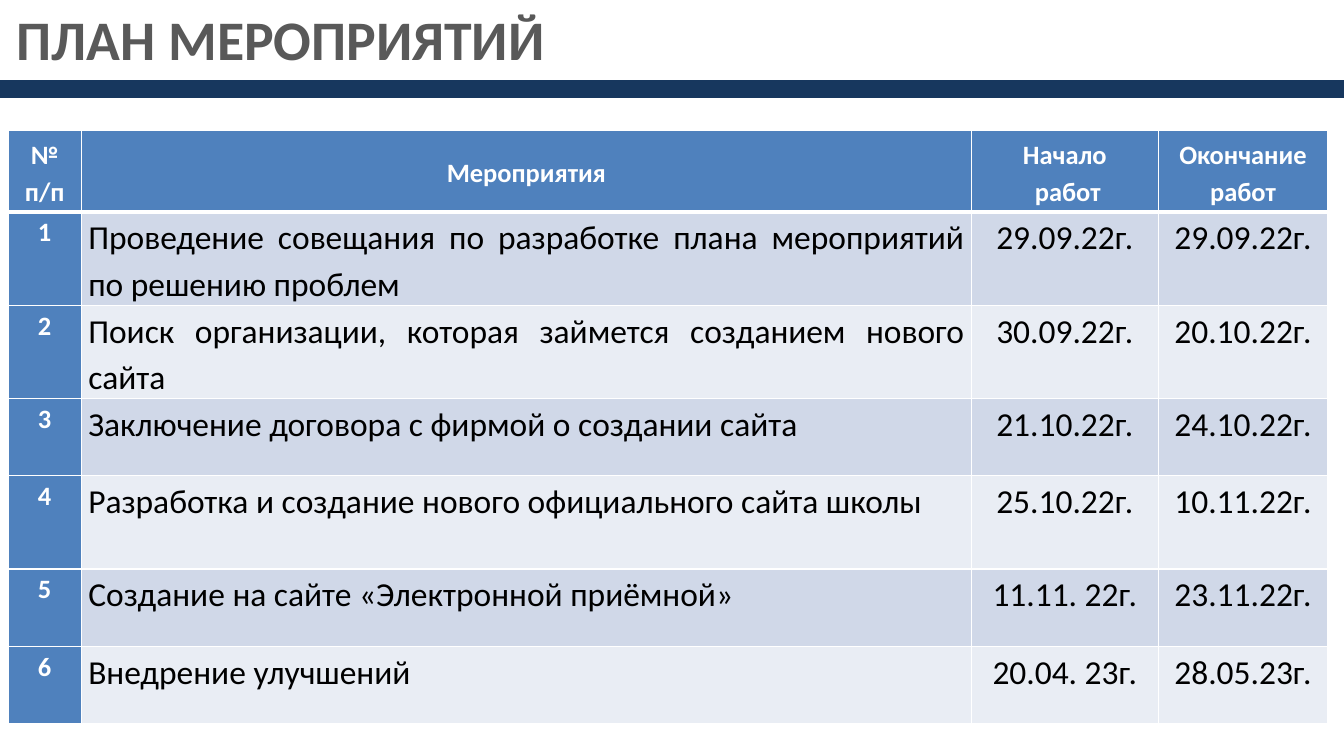
from dataclasses import dataclass
from lxml import etree
from pptx import Presentation
from pptx.dml.color import RGBColor
from pptx.enum.shapes import MSO_SHAPE
from pptx.enum.text import MSO_ANCHOR, MSO_AUTO_SIZE, PP_ALIGN
from pptx.oxml.ns import qn
from pptx.util import Inches, Pt

RECT = MSO_SHAPE.RECTANGLE
TOP, MIDDLE = MSO_ANCHOR.TOP, MSO_ANCHOR.MIDDLE
GROW = MSO_AUTO_SIZE.SHAPE_TO_FIT_TEXT
LEFT, CENTER, JUSTIFY = PP_ALIGN.LEFT, PP_ALIGN.CENTER, PP_ALIGN.JUSTIFY


@dataclass(frozen=True)
class Theme:
    font: str = "Calibri"
    title: str = "595959"
    bar: str = "17375E"
    head: str = "4F81BD"
    bands: tuple = ("D0D8E8", "E9EDF4")
    light: str = "FFFFFF"
    dark: str = "000000"
    big: int = 40
    body: int = 24
    small: int = 19


THEME = Theme()
WIDTH, HEIGHT = Inches(13.39), Inches(7.48)

# Table grid, in percent of the slide's width and height
COLS = (5.45, 66.24, 13.89, 12.62)
ROWS = (10.83, 12.43, 12.43, 10.29, 12.43, 10.29, 10.29)

HEADS = ("№ п/п", "Мероприятия", "Начало\n работ", "Окончание работ")
TASKS = (
    ("Проведение совещания по разработке плана мероприятий по решению проблем",
     "29.09.22г.", "29.09.22г."),
    ("Поиск организации, которая займется созданием нового сайта",
     "30.09.22г.", "20.10.22г."),
    ("Заключение договора с фирмой о создании сайта",
     "21.10.22г.", "24.10.22г."),
    ("Разработка и создание нового официального сайта школы",
     "25.10.22г.", "10.11.22г."),
    ("Создание на сайте «Электронной приёмной»",
     "11.11. 22г.", "23.11.22г."),
    ("Внедрение улучшений", "20.04. 23г.", "28.05.23г."),
)


def wide(share):
    return round(WIDTH * share / 100)


def high(share):
    return round(HEIGHT * share / 100)


def box(left, top, width, height):
    return wide(left), high(top), wide(width), high(height)


def paint(fill, color):
    fill.solid()
    fill.fore_color.rgb = RGBColor.from_string(color)


def style(frame, size, color, bold, align=LEFT, space=None):
    for para in frame.paragraphs:
        para.alignment = align
        para.line_spacing = space
        para.font.name = THEME.font
        para.font.size = Pt(size)
        para.font.bold = bold
        para.font.color.rgb = RGBColor.from_string(color)


def add_title(slide, text, area):
    frame = slide.shapes.add_textbox(*area).text_frame
    frame.word_wrap = True
    frame.auto_size = GROW
    frame.text = text
    style(frame, THEME.big, THEME.title, True)


def add_bar(slide, area):
    bar = slide.shapes.add_shape(RECT, *area)
    bar.shadow.inherit = False
    paint(bar.fill, THEME.bar)
    paint(bar.line.fill, THEME.bar)
    bar.line.width = Pt(2)


def edge(cell, side, points):
    props = cell._tc.get_or_add_tcPr()
    line = etree.SubElement(props, qn(f"a:ln{side}"), w=str(Pt(points)))
    fill = etree.SubElement(line, qn("a:solidFill"))
    etree.SubElement(fill, qn("a:srgbClr"), val=THEME.light)


def fill_cell(cell, text, row, col):
    # Borders precede the fill in the cell's properties
    thick = {(0, "B"), (1, "T")}
    for side in "LRTB":
        edge(cell, side, 3 if (row, side) in thick else 1)
    label = row == 0 or col == 0
    paint(cell.fill, THEME.head if label else THEME.bands[(row - 1) % 2])
    cell.margin_left = cell.margin_right = Inches(0.07)
    cell.margin_top = cell.margin_bottom = 0
    cell.vertical_anchor = MIDDLE if row == 0 else TOP
    cell.text = text
    size = THEME.small if label else THEME.body
    color = THEME.light if label else THEME.dark
    align = JUSTIFY if col == 1 and row else CENTER
    style(cell.text_frame, size, color, label, align, 1.15)


def add_plan(slide, left, top):
    area = box(left, top, sum(COLS), sum(ROWS))
    table = slide.shapes.add_table(len(ROWS), len(COLS), *area).table
    table.first_col = True
    for col, share in zip(table.columns, COLS):
        col.width = wide(share)
    for row, share in zip(table.rows, ROWS):
        row.height = high(share)
    lines = [HEADS] + [(str(n), *task) for n, task in enumerate(TASKS, 1)]
    for row, line in enumerate(lines):
        for col, text in enumerate(line):
            fill_cell(table.cell(row, col), text, row, col)


def main():
    deck = Presentation()
    deck.slide_width, deck.slide_height = WIDTH, HEIGHT
    slide = deck.slides.add_slide(deck.slide_layouts[6])
    # Heading
    add_title(slide, "ПЛАН МЕРОПРИЯТИЙ", box(0.52, 0, 84.69, 10.29))
    # Schedule
    add_plan(slide, 0.6, 17.38)
    # Divider
    add_bar(slide, box(0, 10.83, 100, 2))
    deck.save("out.pptx")


if __name__ == "__main__":
    main()
